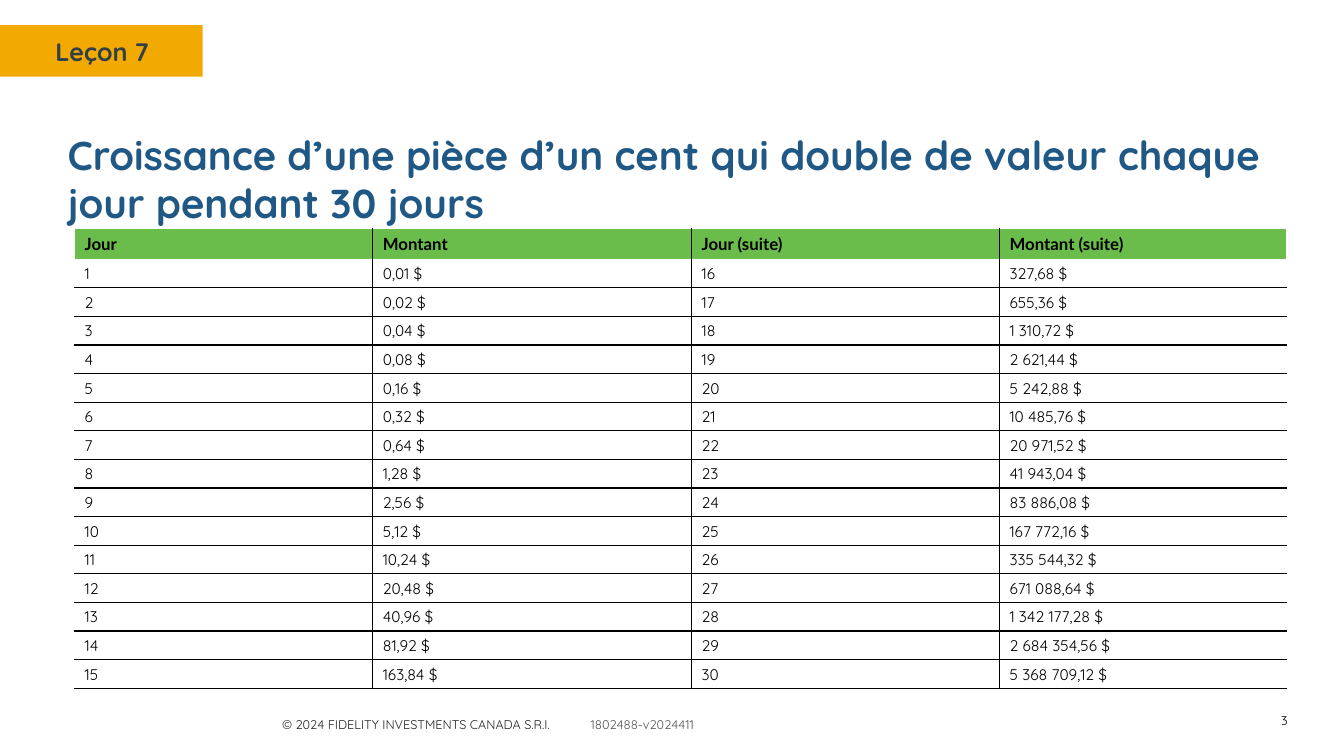
from collections import namedtuple

from lxml.etree import SubElement
from pptx import Presentation
from pptx.dml.color import RGBColor
from pptx.enum.shapes import MSO_SHAPE
from pptx.enum.text import MSO_ANCHOR, MSO_AUTO_SIZE, PP_ALIGN
from pptx.oxml.ns import qn
from pptx.util import Inches, Pt

COLORS = {
    "gold": "F2A900",
    "slate": "333F48",
    "blue": "205885",
    "green": "6ABD4A",
    "black": "000000",
    "white": "FFFFFF",
    "ink": "222222",
    "gray": "545454",
}
HEADERS = ["Jour", "Montant", "Jour (suite)", "Montant (suite)"]
COLUMN_SHARES = [24.6, 26.3, 25.4, 23.7]
HEADER_SHARE = 6.6
DAYS_PER_COLUMN = 15
HARD_SPACE = " "

Box = namedtuple("Box", "left top width height")
SLIDE = Box(0, 0, Inches(13.33), Inches(7.5))


def share(total, percent):
    return int(total * percent / 100)


def inside(box, left, top, width, height):
    return Box(
        box.left + share(box.width, left),
        box.top + share(box.height, top),
        share(box.width, width),
        share(box.height, height),
    )


def write(para, text, size=11, color="black", face="Quicksand", bold=False, align=PP_ALIGN.LEFT):
    para.alignment = align
    span = para.add_run()
    span.text = text
    span.font.size = Pt(size)
    span.font.name = face
    span.font.bold = bold
    span.font.color.rgb = RGBColor.from_string(COLORS[color])


def add_text_box(page, box, anchor=MSO_ANCHOR.TOP):
    frame = page.shapes.add_textbox(*box).text_frame
    frame.word_wrap = True
    frame.vertical_anchor = anchor
    return frame.paragraphs[0]


def add_lesson_tag(page, box):
    band = page.shapes.add_shape(MSO_SHAPE.RECTANGLE, *box)
    band.shadow.inherit = False
    band.fill.solid()
    band.fill.fore_color.rgb = RGBColor.from_string(COLORS["gold"])
    band.line.fill.background()
    label = add_text_box(page, inside(box, 22.4, 12, 65, 78))
    write(label, "Leçon 7", size=18, color="slate", bold=True)


def add_title(page, box):
    title = page.shapes.title
    title.left, title.top, title.width, title.height = box
    frame = title.text_frame
    frame.auto_size = MSO_AUTO_SIZE.NONE
    frame.word_wrap = True
    frame.vertical_anchor = MSO_ANCHOR.TOP
    write(
        frame.paragraphs[0],
        "Croissance d’une pièce d’un cent qui double de valeur chaque jour pendant 30 jours",
        size=28.8, color="blue", bold=True,
    )


def amount(day):
    number = f"{2 ** (day - 1) / 100:,.2f}"
    return number.replace(",", HARD_SPACE).replace(".", ",") + HARD_SPACE + "$"


def set_borders(cell, **edges):
    properties = cell._tc.get_or_add_tcPr()
    for side in "LRTB":
        line = SubElement(properties, qn(f"a:ln{side}"), w=str(Pt(1)))
        if edges[side] is None:
            SubElement(line, qn("a:noFill"))
        else:
            fill = SubElement(line, qn("a:solidFill"))
            SubElement(fill, qn("a:srgbClr"), val=COLORS[edges[side]])


def add_growth_table(page, box):
    rows = [HEADERS]
    for day in range(1, DAYS_PER_COLUMN + 1):
        later = day + DAYS_PER_COLUMN
        rows.append([str(day), amount(day), str(later), amount(later)])

    table = page.shapes.add_table(len(rows), len(HEADERS), *box).table
    table.first_row = False
    table.horz_banding = False
    for column, percent in zip(table.columns, COLUMN_SHARES):
        column.width = share(box.width, percent)
    for index, row in enumerate(table.rows):
        percent = HEADER_SHARE if index == 0 else (100 - HEADER_SHARE) / DAYS_PER_COLUMN
        row.height = share(box.height, percent)

    for row, values in enumerate(rows):
        for column, value in enumerate(values):
            cell = table.cell(row, column)
            set_borders(
                cell,
                L="white" if column == 0 else "black",
                R="white" if column == len(HEADERS) - 1 else "black",
                T={0: "white", 1: None}.get(row, "black"),
                B=None if row == 0 else "black",
            )
            para = cell.text_frame.paragraphs[0]
            if row == 0:
                cell.fill.solid()
                cell.fill.fore_color.rgb = RGBColor.from_string(COLORS["green"])
                write(para, value, size=12, face="Lato", bold=True)
            else:
                cell.fill.background()
                write(para, value)


def add_footer(page, box):
    note = add_text_box(page, inside(box, 0, 0, 43, 100))
    tabs = SubElement(note._p.get_or_add_pPr(), qn("a:tabLst"))
    SubElement(tabs, qn("a:tab"), pos=str(share(box.width, 30.1)), algn="l")
    write(note, "© 2024 FIDELITY INVESTMENTS CANADA S.R.I.", size=9, color="ink")
    write(note, "\t1802488-v2024411", size=9, color="gray")
    number = add_text_box(page, inside(box, 93.1, 0, 6.9, 72), anchor=MSO_ANCHOR.MIDDLE)
    write(number, "3", size=9, align=PP_ALIGN.RIGHT)


def main():
    deck = Presentation()
    deck.slide_width, deck.slide_height = SLIDE.width, SLIDE.height
    page = deck.slides.add_slide(deck.slide_layouts.get_by_name("Title Only"))
    add_lesson_tag(page, inside(SLIDE, 0, 3.33, 15.08, 6.8))
    add_footer(page, inside(SLIDE, 20.25, 94.13, 76.3, 3.33))
    add_title(page, inside(SLIDE, 4.28, 16.53, 91.52, 9.73))
    add_growth_table(page, inside(SLIDE, 5.55, 30.27, 90.2, 60.67))
    deck.save("out.pptx")


if __name__ == "__main__":
    main()
